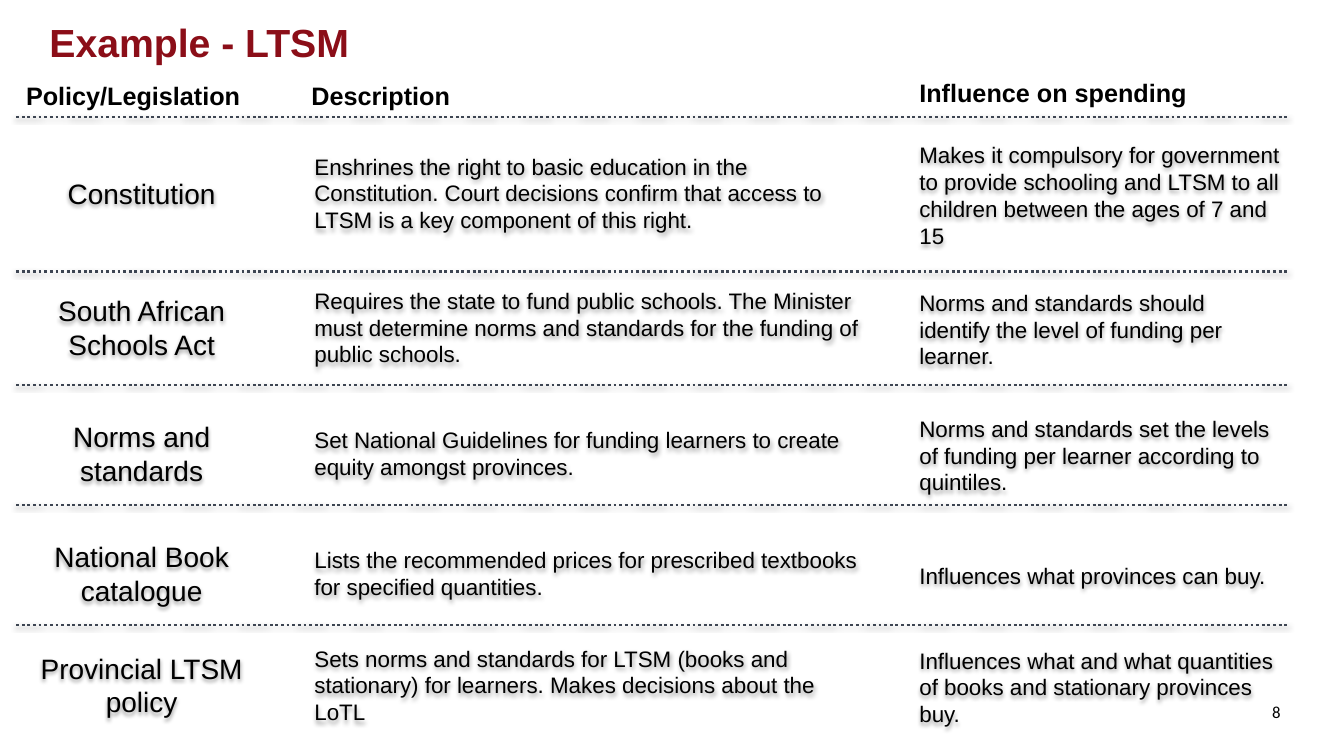
from lxml import etree
from pptx import Presentation
from pptx.dml.color import RGBColor
from pptx.enum.dml import MSO_LINE
from pptx.enum.shapes import MSO_CONNECTOR
from pptx.enum.text import MSO_ANCHOR, MSO_AUTO_SIZE, PP_ALIGN
from pptx.oxml.ns import qn
from pptx.util import Inches, Pt

LEFT, CENTER, RIGHT = PP_ALIGN.LEFT, PP_ALIGN.CENTER, PP_ALIGN.RIGHT
TOP, MIDDLE = MSO_ANCHOR.TOP, MSO_ANCHOR.MIDDLE
STRAIGHT, DOTS = MSO_CONNECTOR.STRAIGHT, MSO_LINE.ROUND_DOT
NO_FIT = MSO_AUTO_SIZE.NONE

BLACK, RED, SLATE = "000000", "8B0E18", "3D4552"

# Column left and width
COLS = [(0.16, 2.49), (3.02, 5.63), (9.02, 3.77)]
HEADS = [("Policy/Legislation", 0.16, 0.75, 2.49),
         ("Description", 2.99, 0.75, 5.67),
         ("Influence on spending", 9.02, 0.72, 3.39)]
RULES = [1.16, 2.69, 3.82, 5.01, 6.2]
# Row top, row height, then the three cells
ROWS = [
    (1.36, 1.11, "Constitution",
     "Enshrines the right to basic education in the Constitution. Court "
     "decisions confirm that access to LTSM is a key component of this right.",
     "Makes it compulsory for government to provide schooling and LTSM to all "
     "children between the ages of 7 and 15"),
    (2.69, 1.11, "South African Schools Act",
     "Requires the state to fund public schools. The Minister must determine "
     "norms and standards for the funding of public schools.",
     "Norms and standards should identify the level of funding per learner."),
    (4, 0.99, "Norms and standards",
     "Set National Guidelines for funding learners to create equity amongst "
     "provinces.",
     "Norms and standards set the levels of funding per learner according to "
     "quintiles."),
    (5.19, 0.99, "National Book catalogue",
     "Lists the recommended prices for prescribed textbooks for specified "
     "quantities.",
     "Influences what provinces can buy."),
    (6.3, 0.99, "Provincial LTSM policy",
     "Sets norms and standards for LTSM (books and stationary) for learners. "
     "Makes decisions about the LoTL",
     "Influences what and what quantities of books and stationary provinces "
     "buy."),
]


def rgb(code):
    return RGBColor.from_string(code)


def shade(shape):
    """Give a shape a soft shadow straight below it."""
    props = shape._element.spPr
    list_ = etree.SubElement(props, qn("a:effectLst"))
    drop = etree.SubElement(list_, qn("a:outerShdw"), blurRad=str(Pt(3.1)),
                            dist=str(Pt(1.6)), dir="5400000", rotWithShape="0")
    tint = etree.SubElement(drop, qn("a:srgbClr"), val=BLACK)
    etree.SubElement(tint, qn("a:alpha"), val="38000")


def write(shape, text, size=16, font="Arial", color=BLACK, bold=False,
          align=LEFT, anchor=MIDDLE):
    frame = shape.text_frame
    frame.word_wrap = True
    frame.auto_size = NO_FIT
    frame.vertical_anchor = anchor
    para = frame.paragraphs[0]
    para.alignment = align
    run = para.add_run()
    run.text = text
    run.font.size = Pt(size)
    run.font.name = font
    run.font.bold = bold
    run.font.color.rgb = rgb(color)


def label(slide, box, text, **style):
    shape = slide.shapes.add_textbox(*map(Inches, box))
    write(shape, text, **style)
    return shape


def title(slide, box, text):
    shape = slide.shapes.title
    shape.left, shape.top, shape.width, shape.height = map(Inches, box)
    write(shape, text, size=28, color=RED, bold=True)


def heads(slide):
    for text, left, top, width in HEADS:
        label(slide, (left, top, width, 0.4), text, size=18, bold=True,
              anchor=TOP)


def row(slide, top, height, cells):
    for i, ((left, width), text) in enumerate(zip(COLS, cells)):
        drop = 0.02 if i == 2 else 0
        style = {"size": 20, "align": CENTER} if i == 0 else {}
        shade(label(slide, (left, top + drop, width, height), text, **style))


def rule(slide, left, right, y):
    line = slide.shapes.add_connector(
        STRAIGHT, Inches(left), Inches(y), Inches(right), Inches(y))
    line.line.color.rgb = rgb(SLATE)
    line.line.width = Pt(2)
    line.line.dash_style = DOTS
    shade(line)


def main():
    deck = Presentation()
    deck.slide_width, deck.slide_height = Inches(13.33), Inches(7.5)
    slide = deck.slides.add_slide(deck.slide_layouts[5])
    title(slide, (0.39, 0.19, 12.63, 0.45), "Example - LTSM")
    label(slide, (12.04, 6.91, 0.76, 0.39), "8", size=12, font="Calibri",
          align=RIGHT, anchor=TOP)
    for top, height, *cells in ROWS:
        row(slide, top, height, cells)
    heads(slide)
    for y in RULES:
        rule(slide, 0.16, 12.79, y)
    deck.save("out.pptx")


if __name__ == "__main__":
    main()
